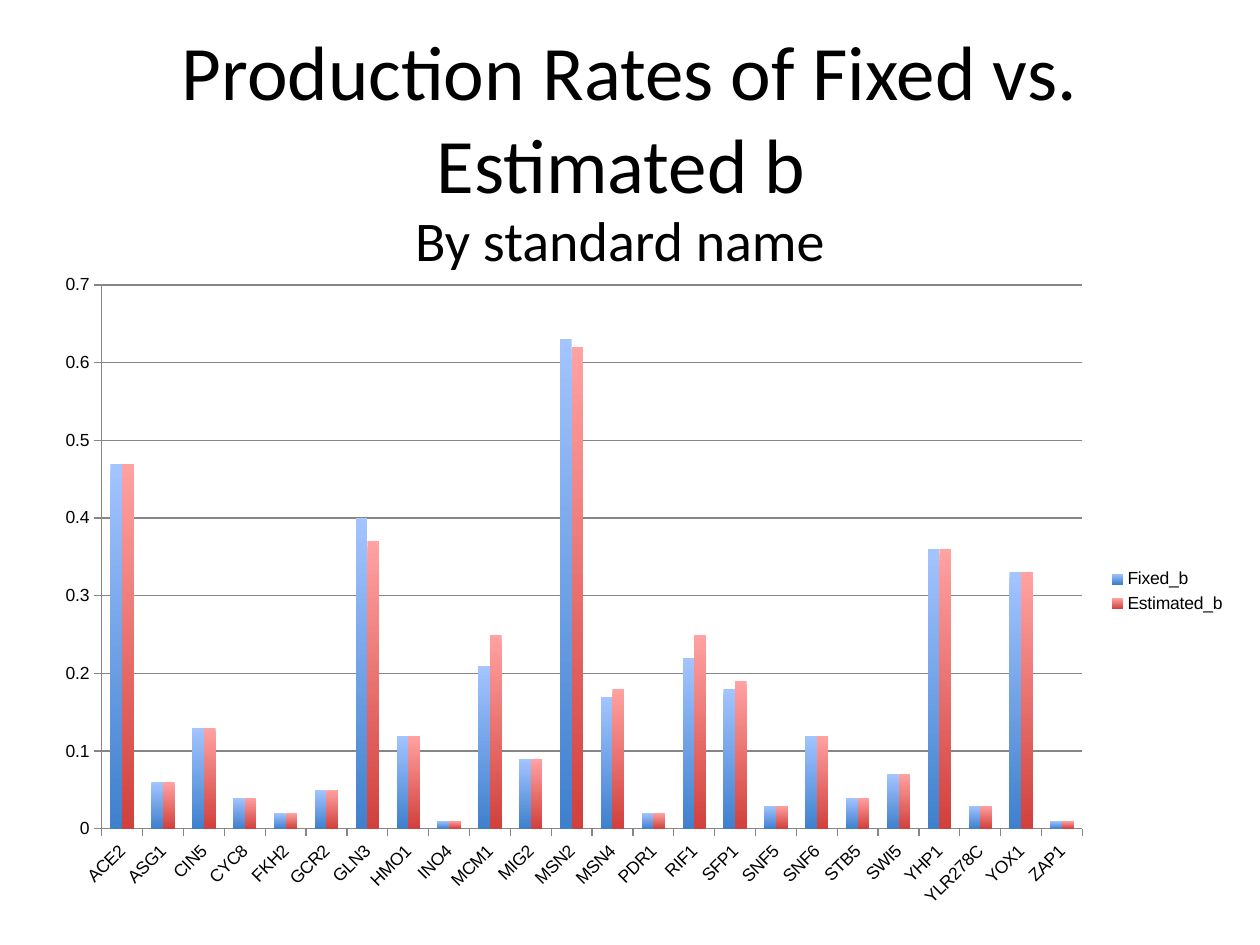
from pptx import Presentation
from pptx.chart.data import CategoryChartData
from pptx.dml.color import RGBColor
from pptx.enum.chart import XL_CHART_TYPE, XL_LEGEND_POSITION, XL_TICK_MARK
from pptx.enum.text import MSO_ANCHOR, PP_ALIGN
from pptx.util import Cm, Pt

CLUSTERED = XL_CHART_TYPE.COLUMN_CLUSTERED
LEGEND_RIGHT = XL_LEGEND_POSITION.RIGHT
OUTSIDE, NO_TICK = XL_TICK_MARK.OUTSIDE, XL_TICK_MARK.NONE
CENTER = PP_ALIGN.CENTER
TOP, MIDDLE = MSO_ANCHOR.TOP, MSO_ANCHOR.MIDDLE

BLACK = RGBColor(0x00, 0x00, 0x00)
GRAY = RGBColor(0x86, 0x86, 0x86)
BLUES = (RGBColor(0xA3, 0xC4, 0xFF), RGBColor(0x3F, 0x80, 0xCD))
REDS = (RGBColor(0xFF, 0xA2, 0xA1), RGBColor(0xD1, 0x40, 0x3C))

RATES = [
    ("ACE2", 0.47, 0.47), ("ASG1", 0.06, 0.06), ("CIN5", 0.13, 0.13),
    ("CYC8", 0.04, 0.04), ("FKH2", 0.02, 0.02), ("GCR2", 0.05, 0.05),
    ("GLN3", 0.4, 0.37), ("HMO1", 0.12, 0.12), ("INO4", 0.01, 0.01),
    ("MCM1", 0.21, 0.25), ("MIG2", 0.09, 0.09), ("MSN2", 0.63, 0.62),
    ("MSN4", 0.17, 0.18), ("PDR1", 0.02, 0.02), ("RIF1", 0.22, 0.25),
    ("SFP1", 0.18, 0.19), ("SNF5", 0.03, 0.03), ("SNF6", 0.12, 0.12),
    ("STB5", 0.04, 0.04), ("SWI5", 0.07, 0.07), ("YHP1", 0.36, 0.36),
    ("YLR278C", 0.03, 0.03), ("YOX1", 0.33, 0.33), ("ZAP1", 0.01, 0.01),
]


def add_heading(slide, text, left, top, width, height, size, anchor):
    """Add a centred line of heading text."""
    frame = slide.shapes.add_textbox(left, top, width, height).text_frame
    frame.word_wrap = True
    frame.vertical_anchor = anchor
    frame.margin_left = frame.margin_right = Cm(0.13)
    frame.margin_top = frame.margin_bottom = Cm(0.13)
    heading = frame.paragraphs[0]
    heading.text = text
    heading.alignment = CENTER
    heading.font.name = "Calibri"
    heading.font.size = Pt(size)
    heading.font.color.rgb = BLACK


def style_axis(axis):
    """Give an axis a gray line and outside ticks."""
    axis.major_tick_mark = OUTSIDE
    axis.minor_tick_mark = NO_TICK
    axis.format.line.color.rgb = GRAY
    axis.tick_labels.font.size = Pt(10)


def shade_series(series, colors):
    """Fill the columns of a series from light at the top to dark."""
    fill = series.format.fill
    fill.gradient()
    fill.gradient_angle = 270
    for stop, color in zip(fill.gradient_stops, colors):
        stop.color.rgb = color
    series.invert_if_negative = False


def add_rate_chart(slide, left, top, width, height):
    """Add the clustered columns of fixed and estimated rates."""
    genes, fixed, estimated = zip(*RATES)
    data = CategoryChartData(number_format="General")
    data.categories = genes
    data.add_series("Fixed_b", fixed)
    data.add_series("Estimated_b", estimated)
    chart = slide.shapes.add_chart(CLUSTERED, left, top, width, height, data).chart
    chart.has_title = False
    chart.font.name = "Arial"
    chart.font.size = Pt(10)
    chart.font.color.rgb = BLACK
    chart.has_legend = True
    chart.legend.position = LEGEND_RIGHT
    chart.legend.include_in_layout = False

    rates, names = chart.value_axis, chart.category_axis
    for axis in (rates, names):
        style_axis(axis)
    names._element.txPr.bodyPr.set("rot", "-2700000")
    rates.minimum_scale, rates.maximum_scale, rates.major_unit = 0, 0.7, 0.1
    rates.has_major_gridlines = True
    rates.major_gridlines.format.line.color.rgb = GRAY

    columns = chart.plots[0]
    columns.gap_width = 150
    columns.overlap = 0
    columns.vary_by_categories = False
    for series, colors in zip(columns.series, (BLUES, REDS)):
        shade_series(series, colors)


def main():
    """Build the slide and save it."""
    deck = Presentation()
    deck.slide_width, deck.slide_height = Cm(25.4), Cm(19.05)
    slide = deck.slides.add_slide(deck.slide_layouts[6])
    add_heading(slide, "Production Rates of Fixed vs. Estimated b ",
                Cm(1.27), Cm(0.25), Cm(22.86), Cm(4.19), 44, MIDDLE)
    add_heading(slide, "By standard name",
                Cm(1.07), Cm(4.01), Cm(22.86), Cm(14.6), 32, TOP)
    add_rate_chart(slide, Cm(0.84), Cm(5.28), Cm(24.13), Cm(13.28))
    deck.save("out.pptx")


if __name__ == "__main__":
    main()
